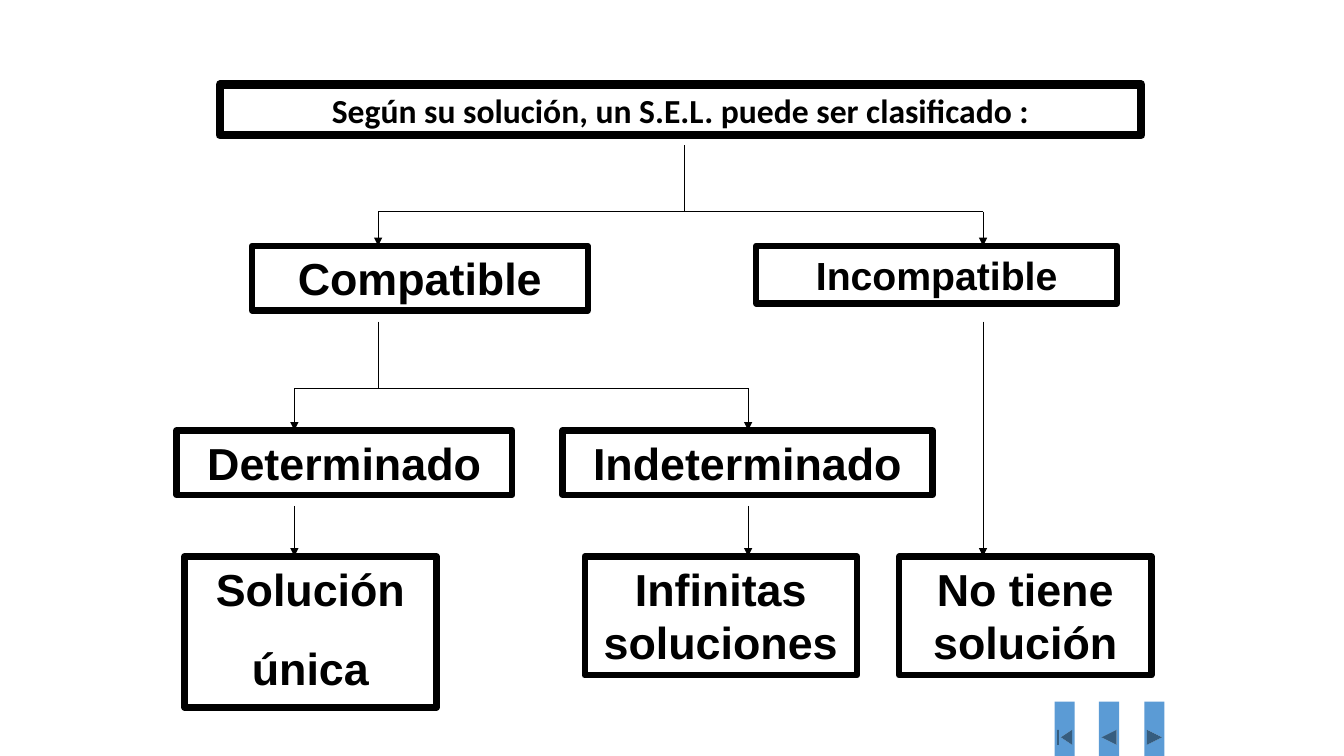
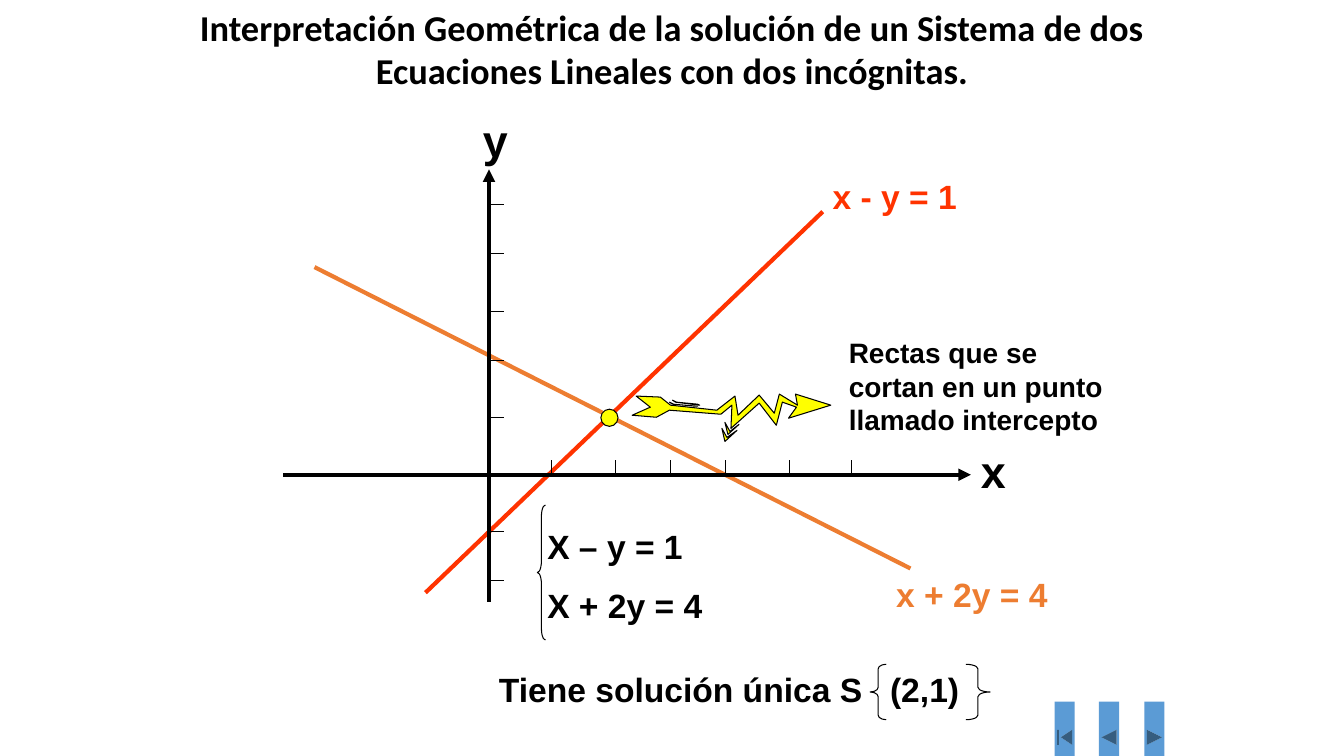
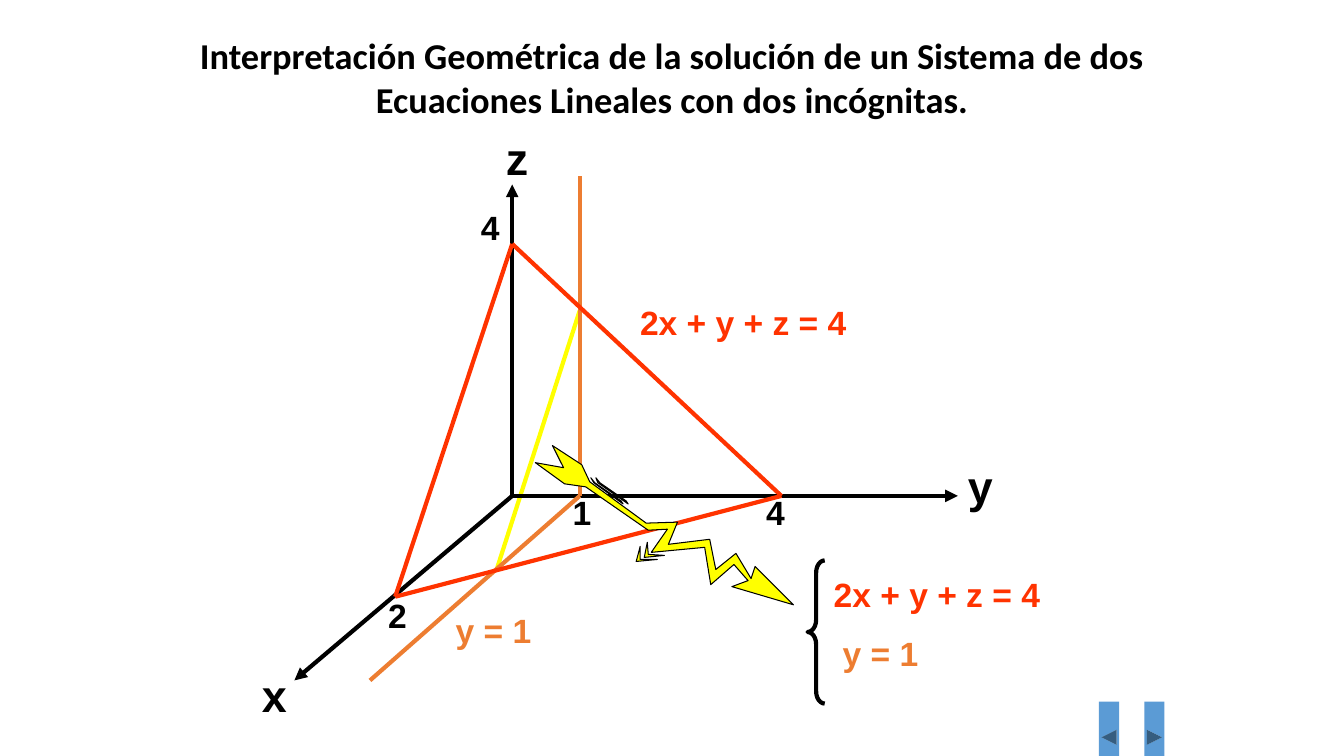
from lxml import etree
from pptx import Presentation
from pptx import util as u
from pptx.dml.color import RGBColor
from pptx.enum import shapes, text
from pptx.oxml.ns import qn

COLORS = {
    "ink": "000000",
    "red": "FF3300",
    "orange": "ED7D31",
    "yellow": "FFFF00",
    "button": "5B9BD5",
}
KINDS = shapes.MSO_SHAPE
BUTTONS = {
    "next": (KINDS.ACTION_BUTTON_FORWARD_OR_NEXT, 11.35),
    "back": (KINDS.ACTION_BUTTON_BACK_OR_PREVIOUS, 10.9),
    "first": (KINDS.ACTION_BUTTON_BEGINNING, 10.46),
}
TITLE = ("Interpretación Geométrica de la solución de un Sistema de dos "
         "Ecuaciones Lineales con dos incógnitas.")


class Board:
    """Holds the deck style and draws elements on the current slide."""

    def __init__(self):
        self.deck = Presentation()
        self.deck.slide_width = u.Inches(13.33)
        self.deck.slide_height = u.Inches(7.5)
        self.page = None

    def new_page(self):
        self.page = self.deck.slides.add_slide(self.deck.slide_layouts[6]).shapes

    def color(self, name):
        return RGBColor.from_string(COLORS[name])

    def add_lines(self, box, lines, size, color="ink", font="Arial", centered=False, tab=None):
        frame = box.text_frame
        frame.word_wrap = True
        frame.vertical_anchor = text.MSO_ANCHOR.TOP
        for index, line in enumerate(lines):
            para = frame.add_paragraph() if index else frame.paragraphs[0]
            if tab:
                stops = etree.SubElement(para._p.get_or_add_pPr(), qn("a:tabLst"))
                etree.SubElement(stops, qn("a:tab"), pos=str(u.Inches(tab)), algn="l")
            para.alignment = text.PP_ALIGN.CENTER if centered else text.PP_ALIGN.LEFT
            if index:
                para.space_before = u.Pt(round(size * 0.55))
            span = para.add_run()
            span.text = line
            span.font.size = u.Pt(size)
            span.font.name = font
            span.font.bold = True
            span.font.color.rgb = self.color(color)

    def label(self, at, *lines, size=24, **style):
        box = self.page.add_textbox(*map(u.Inches, at))
        self.add_lines(box, lines, size, **style)

    def title(self, top):
        self.label((1.67, top, 10, 0.97), TITLE, size=26, font="Calibri", centered=True)

    def paint(self, shape, fill=None, width=None):
        shape.shadow.inherit = False
        if fill:
            shape.fill.solid()
            shape.fill.fore_color.rgb = self.color(fill)
        else:
            shape.fill.background()
        if width:
            shape.line.color.rgb = self.color("ink")
            shape.line.width = u.Pt(width)
        else:
            shape.line.fill.background()

    def shape(self, kind, at, fill=None, width=None, adjust=None):
        shape = self.page.add_shape(kind, *map(u.Inches, at))
        self.paint(shape, fill, width)
        if adjust is not None:
            shape.adjustments[0] = adjust
        return shape

    def frame(self, at, *lines, size=32, width=4.5, font="Arial"):
        box = self.shape(KINDS.RECTANGLE, at, width=width)
        self.add_lines(box, lines, size, font=font, centered=True)

    def line(self, start, end, color="ink", width=0.75, arrow=False):
        ends = map(u.Inches, (*start, *end))
        link = self.page.add_connector(shapes.MSO_CONNECTOR.STRAIGHT, *ends)
        link.line.color.rgb = self.color(color)
        link.line.width = u.Pt(width)
        outline = link._element.spPr
        if arrow:
            etree.SubElement(outline.find(qn("a:ln")), qn("a:tailEnd"), type="triangle")
        etree.SubElement(outline, qn("a:effectLst"))

    def fork(self, stem, top, middle, bottom, branches):
        self.line((branches[0], middle), (branches[-1], middle))
        self.line((stem, top), (stem, middle))
        for branch in branches:
            self.line((branch, middle), (branch, bottom), arrow=True)

    def polygon(self, points):
        corners = [(u.Inches(x), u.Inches(y)) for x, y in points]
        builder = self.page.build_freeform(*corners[0])
        builder.add_line_segments(corners[1:], close=True)
        self.paint(builder.convert_to_shape(), "yellow", 0.75)

    def buttons(self, *names):
        for name in names:
            kind, left = BUTTONS[name]
            self.shape(kind, (left, 6.96, 0.2, 0.71), fill="button")


def classification(board):
    board.new_page()
    board.frame((2.18, 0.84, 9.14, 0.5), "Según su solución, un S.E.L. puede ser clasificado :",
                size=24, width=6, font="Calibri")
    board.frame((2.5, 2.44, 3.33, 0.64), "Compatible")
    board.frame((7.5, 2.44, 3.58, 0.57), "Incompatible", size=28)
    board.fork(6.79, 1.44, 2.1, 2.44, (3.75, 9.75))
    board.fork(3.75, 3.19, 3.85, 4.27, (2.92, 7.42))
    board.frame((1.75, 4.27, 3.33, 0.64), "Determinado")
    board.frame((5.58, 4.27, 3.67, 0.64), "Indeterminado")
    board.frame((1.83, 5.52, 2.5, 1.5), "Solución", "única")
    board.frame((5.8, 5.52, 2.7, 1.18), "Infinitas soluciones")
    board.frame((8.92, 5.52, 2.5, 1.18), "No tiene solución")
    for x, top in ((2.92, 5.02), (7.42, 5.02), (9.75, 3.19)):
        board.line((x, top), (x, 5.52), arrow=True)
    board.buttons("next", "back", "first")


def plane(board):
    board.new_page()
    origin_x, origin_y, tick = 4.85, 4.71, 0.15
    board.line((9.03, 5.64), (3.12, 2.65), "orange", 3)
    board.title(0)
    board.line((4.22, 5.88), (8.16, 2.1), "red", 3)
    board.label((8.16, 1.7, 2.42, 0.5), "x - y = 1", color="red")
    board.label((8.79, 5.64, 2.42, 0.5), "x + 2y = 4", color="orange")
    board.shape(KINDS.OVAL, (5.96, 4.06, 0.17, 0.17), "yellow", 0.75)
    for x in (5.47, 6.1, 6.65, 7.2, 7.83, 8.45):
        board.line((x, origin_y), (x, origin_y - tick))
    for y in (2.03, 2.52, 3.09, 3.58, 4.14, 5.27, 5.76):
        board.line((origin_x, y), (origin_x + tick, y))
    board.line((origin_x, 5.97), (origin_x, 1.68), width=3, arrow=True)
    board.line((2.81, origin_y), (9.63, origin_y), width=3, arrow=True)
    board.label((9.63, 4.35, 0.55, 0.63), "x", size=32)
    board.label((4.69, 1.07, 0.55, 0.63), "y", size=32)
    bolt = [
        [(7.89, 3.91), (8.24, 4.02), (7.82, 4.15), (7.9, 4.04), (7.76, 3.99), (7.7, 4.22),
         (7.53, 4), (7.25, 4.25), (7.26, 4.02), (7.15, 4.11), (6.64, 4.07), (6.51, 4.14),
         (6.27, 4.12), (6.45, 4.04), (6.31, 3.93), (6.55, 3.94), (6.65, 4.02), (7.11, 4.07),
         (7.29, 3.93), (7.32, 4.12), (7.53, 3.92), (7.68, 4.1), (7.73, 3.91), (7.91, 4.02)],
        [(7.19, 4.19), (7.24, 4.28), (7.33, 4.21), (7.22, 4.31)],
        [(7.16, 4.25), (7.21, 4.34), (7.31, 4.27), (7.19, 4.38)],
        [(6.64, 3.99), (6.68, 4.01), (6.9, 4.03), (6.92, 4.03), (6.67, 4.01)],
        [(6.67, 3.97), (6.71, 3.99), (6.92, 4.01), (6.94, 4.02), (6.7, 3.99)],
    ]
    for points in bolt:
        board.polygon(points)
    board.label((8.32, 3.28, 2.83, 1.1), "Rectas que se cortan en un punto llamado intercepto",
                size=20)
    board.label((4.85, 6.59, 6.14, 0.5), "Tiene solución única S\t(2,1)", tab=3.88)
    board.shape(KINDS.LEFT_BRACE, (8.63, 6.59, 0.16, 0.55), width=0.75, adjust=0.29)
    board.shape(KINDS.RIGHT_BRACE, (9.58, 6.59, 0.24, 0.55), width=0.75, adjust=0.19)
    board.shape(KINDS.LEFT_BRACE, (5.33, 5.01, 0.08, 1.34), width=0.75, adjust=1.4)
    board.label((5.33, 5.17, 1.97, 1.11), "X – y = 1", "X + 2y = 4")
    board.buttons("next", "back", "first")


def space(board):
    board.new_page()
    origin = (5.08, 4.92)
    on_x, on_y, on_z = (3.92, 5.92), (7.75, 4.92), (5.08, 2.42)
    board.line((5.75, 3.08), (4.92, 5.67), "yellow", 3)
    for tip, name, left, top in (((2.92, 6.75), "x", 2.5, 6.58),
                                 ((9.5, 4.92), "y", 9.5, 4.5),
                                 ((5.08, 1.83), "z", 4.92, 1.25)):
        board.line(origin, tip, width=3, arrow=True)
        board.label((left, top, 0.58, 0.63), name, size=32)
    for end in ((5.75, 1.75), (3.67, 6.75)):
        board.line((5.75, 4.92), end, "orange", 3)
    for value, left, top in (("1", 5.58, 4.83), ("4", 7.5, 4.83),
                             ("2", 3.75, 5.85), ("4", 4.67, 2)):
        board.label((left, top, 0.58, 0.5), value)
    for start, end in ((on_z, on_y), (on_z, on_x), (on_x, on_y)):
        board.line(start, end, "red", 3)
    bolt = [
        [(7.49, 5.62), (7.87, 6), (7.26, 5.82), (7.42, 5.76), (7.28, 5.6), (7.05, 5.8),
         (6.99, 5.43), (6.46, 5.48), (6.62, 5.25), (6.43, 5.26), (5.81, 4.83), (5.6, 4.8),
         (5.31, 4.59), (5.59, 4.64), (5.48, 4.42), (5.77, 4.61), (5.85, 4.78), (6.41, 5.19),
         (6.72, 5.18), (6.63, 5.4), (7.04, 5.35), (7.1, 5.65), (7.3, 5.49), (7.45, 5.74)],
        [(6.42, 5.38), (6.43, 5.5), (6.59, 5.51), (6.39, 5.53)],
        [(6.35, 5.42), (6.35, 5.55), (6.52, 5.55), (6.31, 5.57)],
        [(5.86, 4.74), (5.9, 4.79), (6.16, 4.97), (6.18, 5), (5.89, 4.79)],
        [(5.91, 4.74), (5.95, 4.79), (6.21, 4.97), (6.23, 5), (5.93, 4.79)],
    ]
    for points in bolt:
        board.polygon(points)
    for left, top in ((6.25, 2.95), (8.17, 5.64)):
        board.label((left, top, 3.17, 0.5), "2x + y + z = 4", color="red")
    for left, top in ((4.42, 6), (8.26, 6.23)):
        board.label((left, top, 1.42, 0.5), "y = 1", color="orange")
    board.shape(KINDS.LEFT_BRACE, (8.01, 5.56, 0.17, 1.42), width=3, adjust=0.71)
    board.title(0.28)
    board.buttons("next", "back")


def main():
    board = Board()
    classification(board)
    plane(board)
    space(board)
    board.deck.save("out.pptx")


if __name__ == "__main__":
    main()
